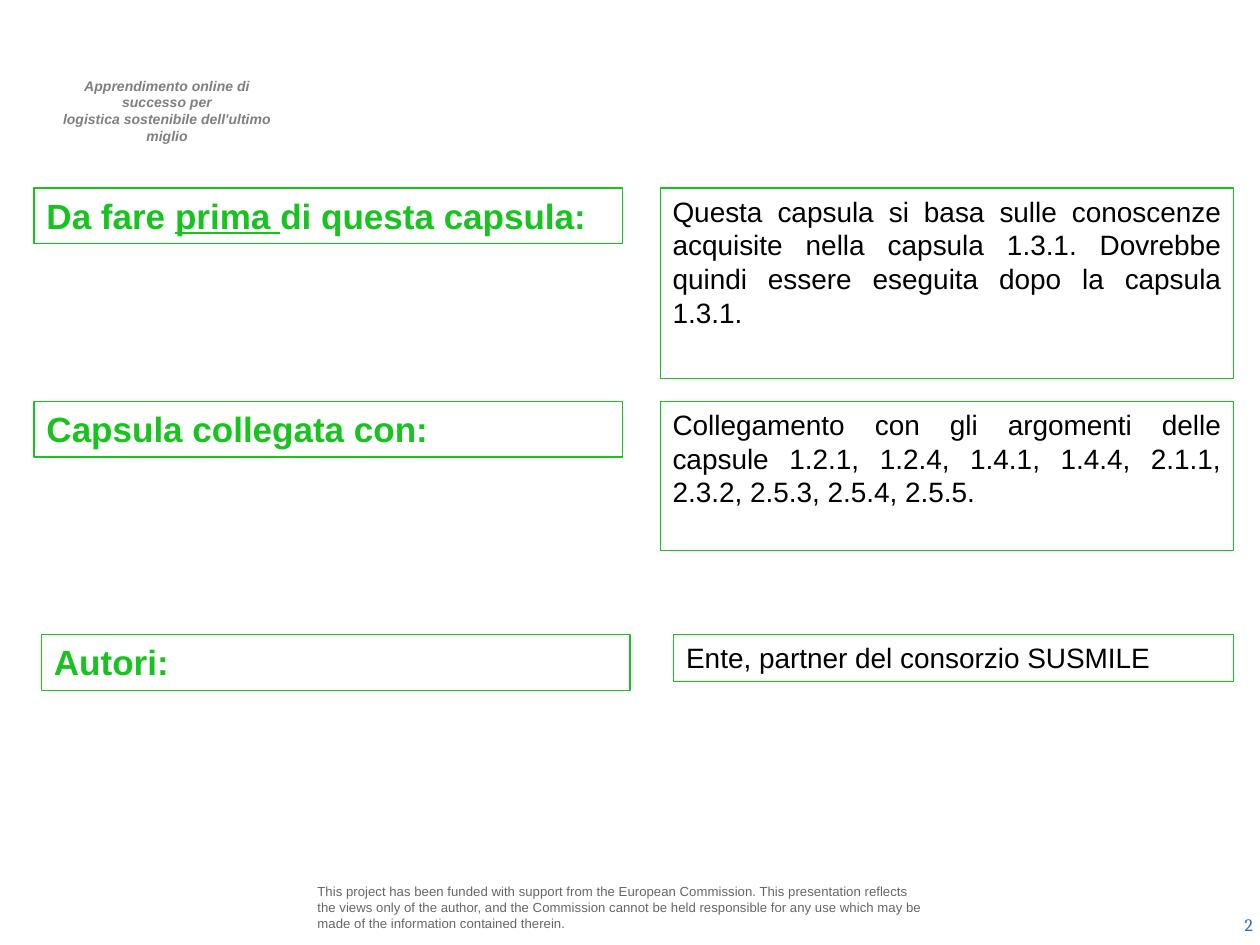
import pptx
import pptx.util
import pptx.dml.color
import pptx.enum.shapes
import pptx.enum.text

Pt = pptx.util.Pt
ALIGN = pptx.enum.text.PP_ALIGN
ANCHOR = pptx.enum.text.MSO_ANCHOR
HUES = {
    "green": "18C320",
    "white": "FFFFFF",
    "black": "000000",
    "grey": "7F7F7F",
    "dim": "666666",
    "blue": "3366CC",
}


def hue(name):
    return pptx.dml.color.RGBColor.from_string(HUES[name])


def write(shape, text, size=16, color="black", face="Arial", bold=False,
          slant=False, align=ALIGN.LEFT, anchor=ANCHOR.TOP,
          inset=(7.2, 3.6, 7.2, 3.6)):
    frame = shape.text_frame
    frame.word_wrap = True
    frame.vertical_anchor = anchor
    (frame.margin_left, frame.margin_top,
     frame.margin_right, frame.margin_bottom) = map(Pt, inset)
    for row, line in enumerate(text.split("\n")):
        para = frame.add_paragraph() if row else frame.paragraphs[0]
        para.alignment = align
        for part, words in enumerate(line.split("_")):
            run = para.add_run()
            run.text = words
            font = run.font
            font.name, font.size = face, Pt(size)
            font.bold, font.italic = bold, slant
            font.underline = part % 2 == 1
            font.color.rgb = hue(color)


def label(slide, place, text, **style):
    write(slide.shapes.add_textbox(*map(Pt, place)), text, **style)


def box(slide, place, text, **style):
    kind = pptx.enum.shapes.MSO_SHAPE.RECTANGLE
    shape = slide.shapes.add_shape(kind, *map(Pt, place))
    shape.shadow.inherit = False
    shape.fill.solid()
    shape.fill.fore_color.rgb = hue("white")
    shape.line.color.rgb = hue("green")
    shape.line.width = Pt(0.75)
    write(shape, text, **style)


def pair(slide, top, left, start, high, head, body, align=ALIGN.JUSTIFY):
    box(slide, (left, top, 336.25, 31.7), head, size=20, color="green",
        bold=True)
    box(slide, (start, top, 705 - start, high), body, align=align)


def main():
    deck = pptx.Presentation()
    deck.slide_width, deck.slide_height = Pt(720), Pt(540)
    slide = deck.slides.add_slide(deck.slide_layouts[6])

    label(slide, (21, 40.5, 146, 26.5),
          "Apprendimento online di successo per\n"
          "logistica sostenibile dell'ultimo miglio",
          size=8, color="grey", bold=True, slant=True, align=ALIGN.CENTER,
          inset=(10, 3.6, 7.2, 3.6))
    label(slide, (178.5, 500.5, 355.5, 36),
          "This project has been funded with support from the European "
          "Commission. This presentation reflects the views only of the "
          "author, and the Commission cannot be held responsible for any use "
          "which may be made of the information contained therein.",
          size=7.5, color="dim", anchor=ANCHOR.MIDDLE, inset=(2.9,) * 4)
    label(slide, (555, 513.5, 168, 29), "2", size=10, color="blue",
          face="Cambria", align=ALIGN.RIGHT, anchor=ANCHOR.MIDDLE)

    pair(slide, 107.5, 19.5, 377.25, 109, "Da fare _prima _di questa capsula:",
         "Questa capsula si basa sulle conoscenze acquisite nella capsula "
         "1.3.1. Dovrebbe quindi essere eseguita dopo la capsula 1.3.1.")
    pair(slide, 229.5, 19.5, 377.25, 85, "Capsula collegata con:",
         "Collegamento con gli argomenti delle capsule 1.2.1, 1.2.4, 1.4.1, "
         "1.4.4, 2.1.1, 2.3.2, 2.5.3, 2.5.4, 2.5.5.")
    pair(slide, 362.75, 23.75, 385, 26.6, "Autori:",
         "Ente, partner del consorzio SUSMILE", align=ALIGN.LEFT)

    deck.save("out.pptx")


if __name__ == "__main__":
    main()
